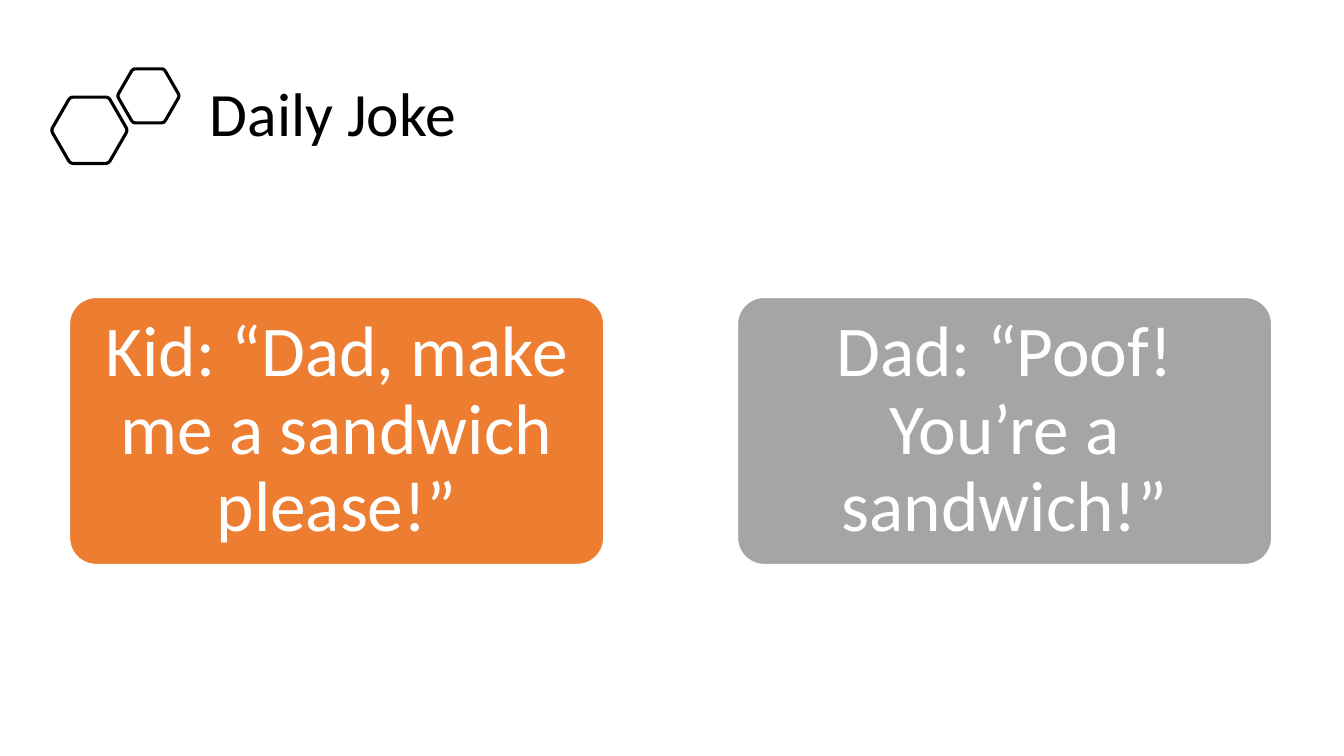
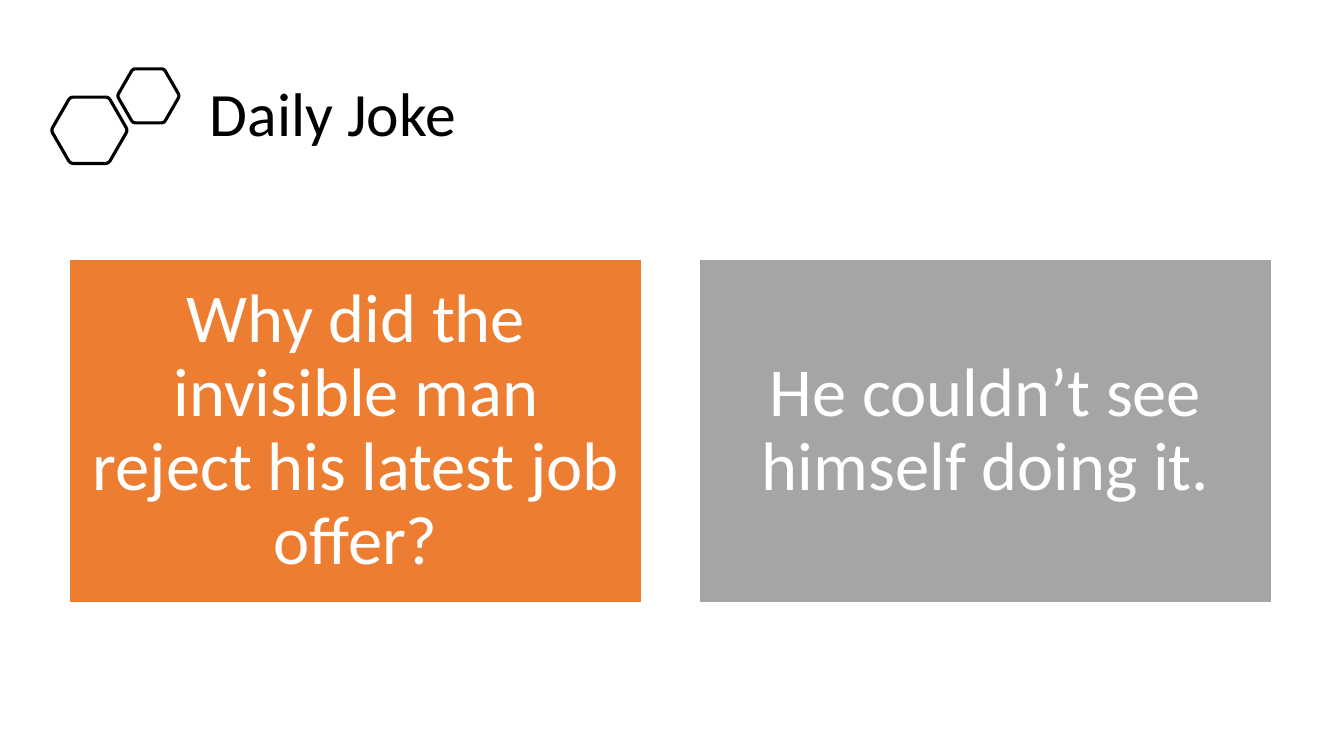
from dataclasses import dataclass
from math import cos, pi, sin

from pptx import Presentation
from pptx.dml.color import RGBColor
from pptx.enum.shapes import MSO_SHAPE
from pptx.enum.text import MSO_ANCHOR, MSO_AUTO_SIZE, PP_ALIGN
from pptx.util import Cm, Pt


@dataclass(frozen=True)
class Theme:
    font: str = "Calibri"
    ink: RGBColor = RGBColor(0x00, 0x00, 0x00)
    paper: RGBColor = RGBColor(0xFF, 0xFF, 0xFF)
    accents: tuple = (RGBColor(0xED, 0x7D, 0x31), RGBColor(0xA5, 0xA5, 0xA5))
    title_size: int = 44
    hexagon_line: float = 2.25
    panel_line: float = 1
    line_spacing: float = 0.9


@dataclass(frozen=True)
class Box:
    """A region of the slide, in centimetres."""
    left: float
    top: float
    width: float
    height: float

    def emu(self):
        return tuple(Cm(v) for v in (self.left, self.top, self.width, self.height))


@dataclass(frozen=True)
class PanelStyle:
    """Panel look; gap is a share of panel width, aspect is height over width."""
    outline: MSO_SHAPE
    gap: float
    aspect: float
    size: int
    inset_x: float
    inset_y: float


THEME = Theme()
SLIDE_SIZE = (33.87, 19.05)
TITLE_BOX = Box(5.03, 1.45, 27.46, 2.97)
ORNAMENT_BOX = Box(1.31, 1.75, 3.2, 2.35)
BODY_BOX = Box(1.75, 5.0, 30.3, 11.72)
CORNER_CUT = 0.09
CORNER_STEPS = 6

ROUNDED = PanelStyle(MSO_SHAPE.ROUNDED_RECTANGLE, 0.25, 0.5, 51, 0.28, 0.18)
SQUARE = PanelStyle(MSO_SHAPE.RECTANGLE, 0.1, 0.6, 49, 0.51, 0.51)

JOKES = (
    (ROUNDED, ("Kid: “Dad, make me a sandwich please!”",
               "Dad: “Poof! You’re a sandwich!”")),
    (SQUARE, ("Why did the invisible man reject his latest job offer?",
              "He couldn’t see himself doing it.")),
)


def set_text(frame, text, size, color, align):
    frame_format = {
        "text": text,
        "word_wrap": True,
        "auto_size": MSO_AUTO_SIZE.NONE,
        "vertical_anchor": MSO_ANCHOR.MIDDLE,
    }
    for attribute, value in frame_format.items():
        setattr(frame, attribute, value)
    paragraph = frame.paragraphs[0]
    paragraph.alignment = align
    paragraph.line_spacing = THEME.line_spacing
    font = paragraph.runs[0].font
    for attribute, value in {"name": THEME.font, "size": Pt(size)}.items():
        setattr(font, attribute, value)
    font.color.rgb = color


def set_outline(shape, color, width):
    shape.shadow.inherit = False
    shape.line.color.rgb = color
    shape.line.width = Pt(width)


def add_title(slide, box, text):
    title = slide.shapes.title
    title.left, title.top, title.width, title.height = box.emu()
    set_text(title.text_frame, text, THEME.title_size, THEME.ink, PP_ALIGN.LEFT)


def rounded_hexagon_points(center_x, center_y, width):
    """Outline of a flat-topped regular hexagon whose corners are softened."""
    radius = width / 2 / (1 - CORNER_CUT / 4)
    corners = [(center_x + radius * cos(k * pi / 3),
                center_y + radius * sin(k * pi / 3)) for k in range(6)]
    points = []
    for k, corner in enumerate(corners):
        before, after = corners[k - 1], corners[(k + 1) % 6]
        for step in range(CORNER_STEPS + 1):
            t = step / CORNER_STEPS
            pull_before = CORNER_CUT * (1 - t) ** 2
            pull_after = CORNER_CUT * t ** 2
            points.append(tuple(
                Cm(c + pull_before * (b - c) + pull_after * (a - c))
                for b, c, a in zip(before, corner, after)))
    return points


def add_hexagons(slide, box):
    """Large hexagon at the lower left of the box, small one at the upper right."""
    large, small = 0.59 * box.width, 0.48 * box.width
    ratio = sin(pi / 3) / 2
    placements = (
        (box.left + large / 2, box.top + box.height - large * ratio, large),
        (box.left + box.width - small / 2, box.top + small * ratio, small),
    )
    group = slide.shapes.add_group_shape()
    for placement in placements:
        start, *rest = rounded_hexagon_points(*placement)
        builder = group.shapes.build_freeform(*start)
        builder.add_line_segments(rest, close=True)
        hexagon = builder.convert_to_shape()
        hexagon.fill.background()
        set_outline(hexagon, THEME.ink, THEME.hexagon_line)


def add_panels(slide, box, style, texts):
    """Equal panels across the box, centred vertically in it."""
    count = len(texts)
    width = box.width / (count + (count - 1) * style.gap)
    height = width * style.aspect
    top = box.top + (box.height - height) / 2
    for index, (text, color) in enumerate(zip(texts, THEME.accents)):
        left = box.left + index * width * (1 + style.gap)
        panel = slide.shapes.add_shape(
            style.outline, *Box(left, top, width, height).emu())
        if style.outline == MSO_SHAPE.ROUNDED_RECTANGLE:
            panel.adjustments[0] = 0.1
        panel.fill.solid()
        panel.fill.fore_color.rgb = color
        set_outline(panel, THEME.paper, THEME.panel_line)
        frame = panel.text_frame
        for side in ("left", "right"):
            setattr(frame, f"margin_{side}", Cm(style.inset_x))
        for side in ("top", "bottom"):
            setattr(frame, f"margin_{side}", Cm(style.inset_y))
        set_text(frame, text, style.size, THEME.paper, PP_ALIGN.CENTER)


def add_joke_slide(deck, style, texts):
    slide = deck.slides.add_slide(deck.slide_layouts.get_by_name("Title Only"))
    add_title(slide, TITLE_BOX, "Daily Joke")
    add_hexagons(slide, ORNAMENT_BOX)
    add_panels(slide, BODY_BOX, style, texts)


def main():
    deck = Presentation()
    deck.slide_width, deck.slide_height = (Cm(v) for v in SLIDE_SIZE)
    for style, texts in JOKES:
        add_joke_slide(deck, style, texts)
    deck.save("out.pptx")


if __name__ == "__main__":
    main()
